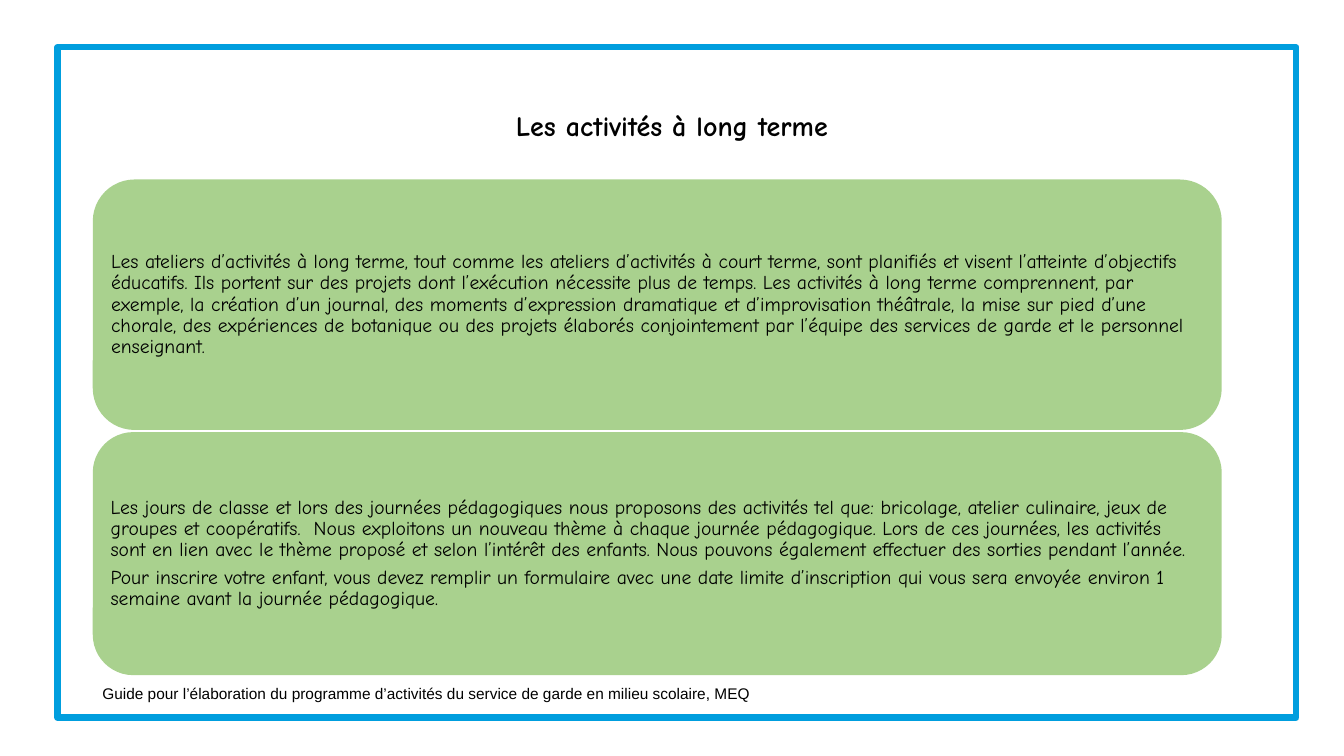
"""Build the slide on long-term activities in a school daycare service."""
from pptx import Presentation
from pptx.dml.color import RGBColor
from pptx.enum.shapes import MSO_SHAPE
from pptx.enum.text import MSO_ANCHOR, PP_ALIGN
from pptx.util import Pt

RECTANGLE = MSO_SHAPE.RECTANGLE
ROUNDED = MSO_SHAPE.ROUNDED_RECTANGLE
TOP, MIDDLE = MSO_ANCHOR.TOP, MSO_ANCHOR.MIDDLE
LEFT, CENTER = PP_ALIGN.LEFT, PP_ALIGN.CENTER

COLORS = {"frame": "009EDE", "panel": "A9D18E", "text": "000000"}
BODY_FONT, SOURCE_FONT = "Comic Neue", "Arial"

TITLE = "Les activités à long terme"
SOURCE = ("Guide pour l’élaboration du programme d’activités du service "
          "de garde en milieu scolaire, MEQ")
WORKSHOPS = [
    "Les ateliers d’activités à long terme, tout comme les ateliers d’activités "
    "à court terme, sont planifiés et visent l’atteinte d’objectifs éducatifs. "
    "Ils portent sur des projets dont l’exécution nécessite plus de temps. "
    "Les activités à long terme comprennent, par exemple, la création d’un "
    "journal, des moments d’expression dramatique et d’improvisation théâtrale, "
    "la mise sur pied d’une chorale, des expériences de botanique ou des projets "
    "élaborés conjointement par l’équipe des services de garde et le personnel "
    "enseignant.",
]
SCHOOL_DAYS = [
    "Les jours de classe et lors des journées pédagogiques nous proposons des "
    "activités tel que: bricolage, atelier culinaire, jeux de groupes et "
    "coopératifs.  Nous exploitons un nouveau thème à chaque journée pédagogique. "
    "Lors de ces journées, les activités sont en lien avec le thème proposé et "
    "selon l’intérêt des enfants. Nous pouvons également effectuer des sorties "
    "pendant l’année.",
    "Pour inscrire votre enfant, vous devez remplir un formulaire avec une date "
    "limite d’inscription qui vous sera envoyée environ 1 semaine avant la "
    "journée pédagogique.",
]


def rgb(name):
    return RGBColor.from_string(COLORS[name])


def write(frame, paragraphs, size, font=BODY_FONT, bold=False, align=LEFT,
          anchor=TOP, line_spacing=1.0, space_after=0):
    frame.word_wrap = True
    frame.vertical_anchor = anchor
    frame.text = "\n".join(paragraphs)
    for paragraph in frame.paragraphs:
        paragraph.alignment = align
        paragraph.line_spacing = line_spacing
        paragraph.space_after = Pt(space_after)
        for run in paragraph.runs:
            run.font.name = font
            run.font.size = Pt(size)
            run.font.bold = bold
            run.font.color.rgb = rgb("text")


def add_frame(slide, left, top, width, height):
    border = slide.shapes.add_shape(
        RECTANGLE, Pt(left), Pt(top), Pt(width), Pt(height))
    border.shadow.inherit = False
    border.fill.background()
    border.line.color.rgb = rgb("frame")
    border.line.width = Pt(4.5)


def add_panel(slide, top, height, paragraphs):
    panel = slide.shapes.add_shape(ROUNDED, Pt(66.3), Pt(top), Pt(806.4), Pt(height))
    panel.shadow.inherit = False
    panel.fill.solid()
    panel.fill.fore_color.rgb = rgb("panel")
    panel.line.fill.background()
    frame = panel.text_frame
    frame.margin_left = frame.margin_right = Pt(4.3)
    frame.margin_top = frame.margin_bottom = Pt(4.3)
    write(frame, paragraphs, 14, anchor=MIDDLE, line_spacing=0.9, space_after=5)


def add_text(slide, left, top, width, height, text, size, margin_top=3.6, **style):
    caption = slide.shapes.add_textbox(Pt(left), Pt(top), Pt(width), Pt(height))
    caption.text_frame.margin_top = Pt(margin_top)
    write(caption.text_frame, [text], size, **style)


def main():
    deck = Presentation()
    deck.slide_width, deck.slide_height = Pt(960), Pt(540)
    slide = deck.slides.add_slide(deck.slide_layouts[6])
    add_frame(slide, 41, 33.8, 884.9, 478.8)
    add_text(slide, 66, 28.8, 828, 103, TITLE, 20, margin_top=25, bold=True,
             align=CENTER, anchor=MIDDLE, line_spacing=0.9)
    add_text(slide, 66, 485.3, 747.4, 20.9, SOURCE, 11, font=SOURCE_FONT,
             space_after=6)
    add_panel(slide, 128.2, 178.9, WORKSHOPS)
    add_panel(slide, 308.7, 173.6, SCHOOL_DAYS)
    deck.save("out.pptx")


if __name__ == "__main__":
    main()
